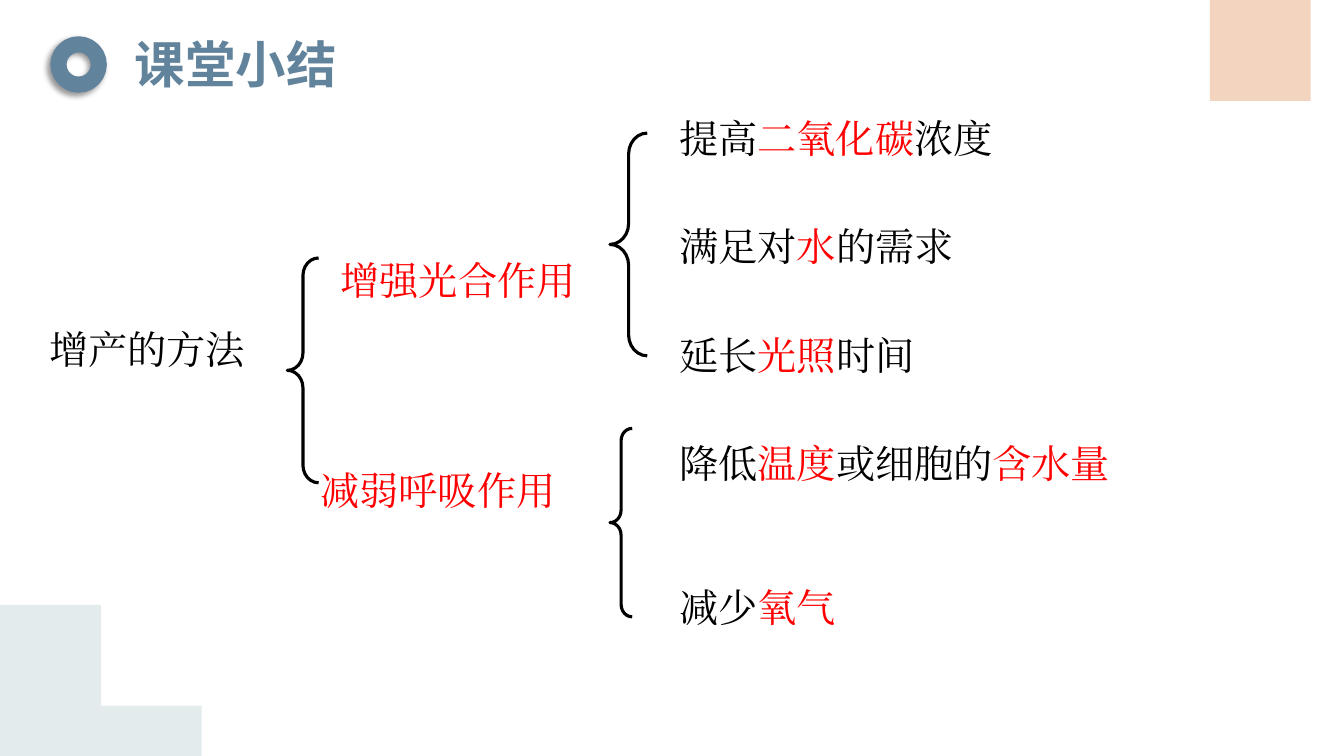
import math
from lxml import etree
from pptx import Presentation
from pptx import util as u
from pptx.dml.color import RGBColor
from pptx.enum import shapes, text
from pptx.oxml import ns

I = u.Inches
W, H = 13.33, 7.5
COLORS = {"slate": "62839C", "peach": "F3D4BF", "mist": "E4EBED",
          "black": "000000", "red": "FF0000"}
TITLE = {"size": u.Pt(36), "name": "Noto Sans CJK SC", "bold": True}
BODY = {"size": u.Pt(28), "name": "Times New Roman"}


def rgb(name):
    return RGBColor.from_string(COLORS[name])


def add_text(s, box, runs, fmt, wrap=True, spacing=1.5, indent=False):
    tf = s.shapes.add_textbox(*map(I, box)).text_frame
    tf.word_wrap = wrap
    tf.auto_size = text.MSO_AUTO_SIZE.SHAPE_TO_FIT_TEXT
    p = tf.paragraphs[0]
    p.line_spacing = spacing
    if indent:
        pPr = p._p.get_or_add_pPr()
        pPr.set("marL", str(I(0.01)))
        pPr.set("indent", str(I(0.02)))
    for words, color in runs:
        r = p.add_run()
        r.text = words
        for key, value in fmt.items():
            setattr(r.font, key, value)
        r.font.color.rgb = rgb(color)
        ea = etree.SubElement(r._r.get_or_add_rPr(), ns.qn("a:ea"))
        ea.set("typeface", fmt["name"])


def add_brace(s, box):
    sp = s.shapes.add_shape(shapes.MSO_SHAPE.LEFT_BRACE, *map(I, box))
    sp.shadow.inherit = False
    sp.fill.background()
    sp.line.color.rgb = rgb("black")
    sp.line.width = u.Pt(2.25)
    sp.adjustments[0] = 0.56


def add_corner_disc(s, center, radius, angles, corner, color):
    start, end = angles
    steps = 60
    arc = [math.radians(start + (end - start) * i / steps) for i in range(steps + 1)]
    pts = [(center[0] + radius * math.cos(a), center[1] + radius * math.sin(a))
           for a in arc] + [corner]
    pts = [(min(max(x, 0), W), min(max(y, 0), H)) for x, y in pts]
    fb = s.shapes.build_freeform(*pts[0], scale=I(1))
    fb.add_line_segments(pts[1:], close=True)
    sp = fb.convert_to_shape()
    sp.shadow.inherit = False
    sp.fill.solid()
    sp.fill.fore_color.rgb = rgb(color)
    sp.line.fill.background()


def add_ring(s, box):
    sp = s.shapes.add_shape(shapes.MSO_SHAPE.OVAL, *map(I, box))
    sp.shadow.inherit = False
    sp.fill.background()
    sp.line.color.rgb = rgb("slate")
    sp.line.width = u.Pt(11.5)
    effects = sp._element.spPr.find(ns.qn("a:effectLst"))
    shadow = etree.SubElement(effects, ns.qn("a:outerShdw"), blurRad=str(u.Pt(4)),
                              dist=str(u.Pt(3)), dir="8100000", algn="tr", rotWithShape="0")
    clr = etree.SubElement(shadow, ns.qn("a:srgbClr"), val=COLORS["black"])
    etree.SubElement(clr, ns.qn("a:alpha"), val="40000")


def add_heading(s, x, y, words):
    add_ring(s, (x, y + 0.16, 0.4, 0.4))
    add_text(s, (x + 0.66, y, 9.68, 0.71), [(words, "slate")], TITLE, spacing=1)


def add_branch(s, label_at, label, brace, leaves):
    add_text(s, (*label_at, 4.1, 0.81), [(label, "red")], BODY, indent=True)
    add_brace(s, brace)
    for y, width, runs in leaves:
        add_text(s, (6.64, y, width, 0.72), runs, BODY)


def add_summary_tree(s, x, y):
    add_text(s, (x, y, 2.18, 0.81), [("增产的方法", "black")], BODY, wrap=False, indent=True)
    add_brace(s, (x + 2.49, y - 0.38, 0.31, 2.23))
    add_branch(s, (x + 2.89, y - 0.68), "增强光合作用", (6.05, 1.32, 0.37, 2.21), [
        (0.85, 3.47, [("提高", "black"), ("二氧化碳", "red"), ("浓度", "black")]),
        (1.92, 3.15, [("满足对", "black"), ("水", "red"), ("的需求", "black")]),
        (3.0, 3.15, [("延长", "black"), ("光照", "red"), ("时间", "black")])])
    add_branch(s, (x + 2.69, y + 1.4), "减弱呼吸作用", (6.05, 4.25, 0.22, 1.87), [
        (4.08, 4.57, [("降低", "black"), ("温度", "red"), ("或细胞的", "black"),
                      ("含水量", "red")]),
        (5.5, 2.03, [("减少", "black"), ("氧气", "red")])])


def main():
    prs = Presentation()
    prs.slide_width, prs.slide_height = I(W), I(H)
    s = prs.slides.add_slide(prs.slide_layouts[6])
    add_corner_disc(s, (12.93, 0.19), 0.79, (59.6, 193.9), (W, 0), "peach")
    add_corner_disc(s, (0.56, 7.37), 0.95, (233.9, 367.9), (0, H), "mist")
    add_heading(s, 0.58, 0.28, "课堂小结")
    add_summary_tree(s, 0.36, 2.94)
    prs.save("out.pptx")


if __name__ == "__main__":
    main()
